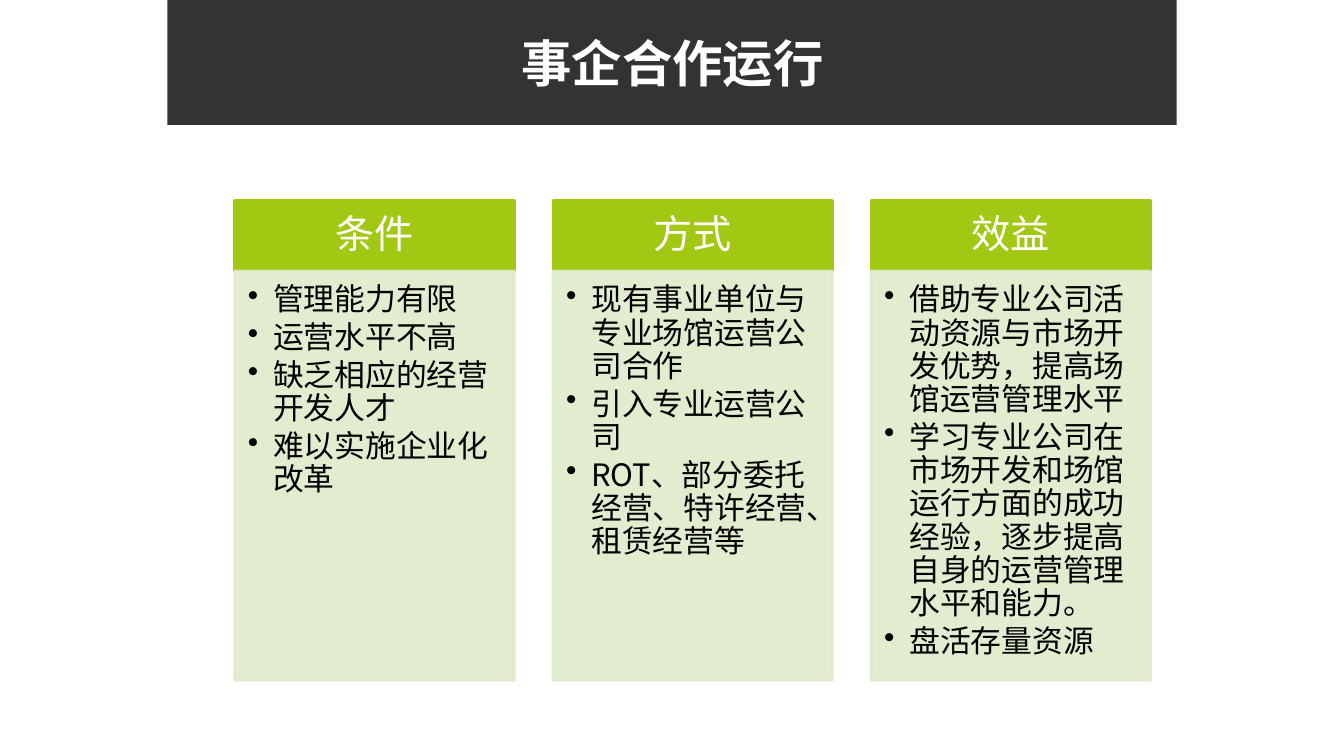
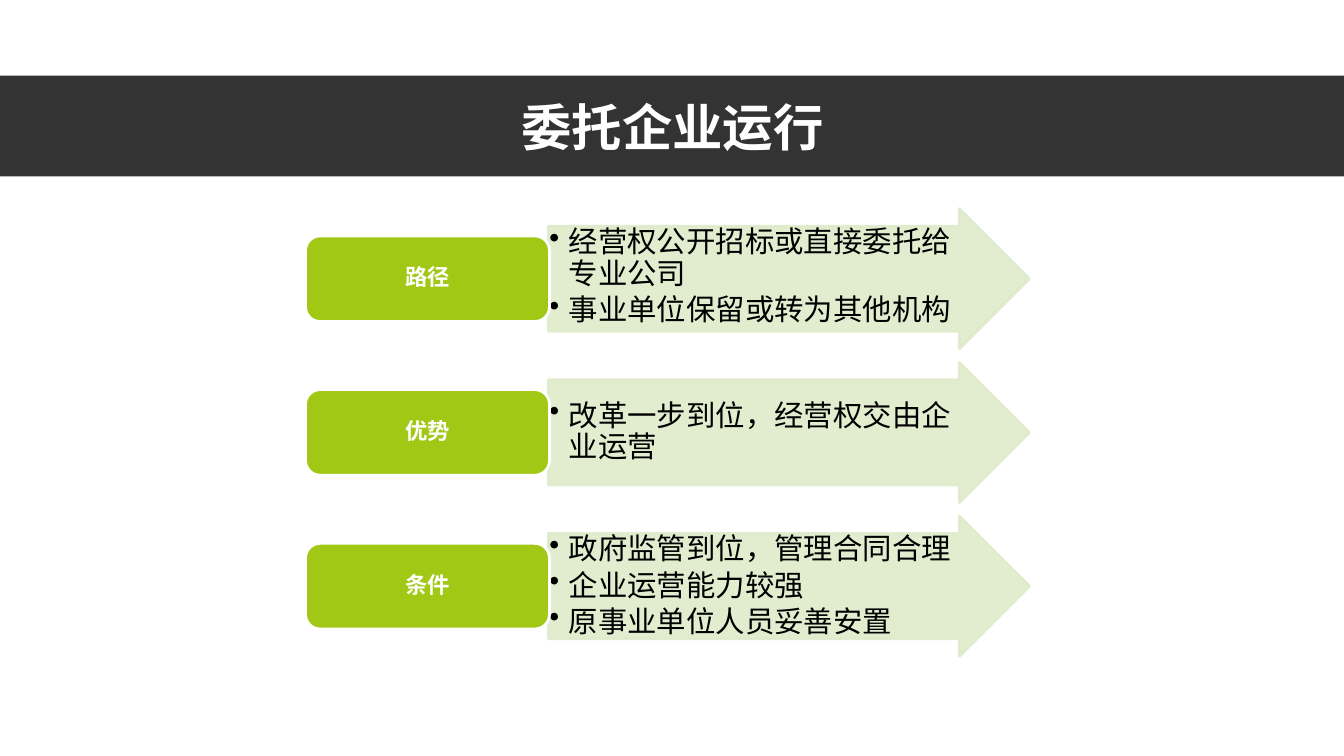
from lxml import etree
from pptx import Presentation
from pptx.dml.color import RGBColor
from pptx.enum.shapes import MSO_SHAPE
from pptx.enum.text import MSO_ANCHOR, PP_ALIGN
from pptx.oxml.ns import qn
from pptx.util import Inches, Pt

RECT, ROUND, ARROW = MSO_SHAPE.RECTANGLE, MSO_SHAPE.ROUNDED_RECTANGLE, MSO_SHAPE.RIGHT_ARROW
TOP, MIDDLE = MSO_ANCHOR.TOP, MSO_ANCHOR.MIDDLE
LEFT, CENTER = PP_ALIGN.LEFT, PP_ALIGN.CENTER

FONT = "Noto Sans CJK SC"
COLORS = {"band": "333333", "green": "A2C813", "label": "A2C816", "pale": "DFEBCB",
          "white": "FFFFFF", "black": "000000"}
TITLE_INSETS = (0.31, 0.05, 0.3, 0.05)


def add_box(s, kind, at, fill, line=None, alpha=None):
    """Draw a filled shape, optionally outlined and translucent (alpha in percent)."""
    sp = s.shapes.add_shape(kind, *[Inches(v) for v in at])
    sp.shadow.inherit = False
    sp.fill.solid()
    sp.fill.fore_color.rgb = RGBColor.from_string(COLORS[fill])
    if line:
        sp.line.color.rgb = RGBColor.from_string(COLORS[line])
        sp.line.width = Pt(2)
    else:
        sp.line.fill.background()
    if alpha:
        for clr in sp.element.spPr.iter(qn("a:srgbClr")):
            etree.SubElement(clr, qn("a:alpha")).set("val", str(alpha * 1000))
    return sp


def write(sp, lines, size, color, insets, anchor=MIDDLE, bold=False, indent=None, spacing=0.9):
    """Fill a shape with paragraphs: bulleted if an indent is given, else centred."""
    tf = sp.text_frame
    tf.word_wrap = True
    tf.vertical_anchor = anchor
    tf.margin_left, tf.margin_top, tf.margin_right, tf.margin_bottom = [Inches(v) for v in insets]
    for i, line in enumerate(lines):
        p = tf.add_paragraph() if i else tf.paragraphs[0]
        p.alignment = LEFT if indent else CENTER
        p.line_spacing = spacing
        if indent:
            p.space_after = Pt(round(size * 0.15, 2))
            pPr = p._p.get_or_add_pPr()
            pPr.set("marL", str(Inches(indent)))
            pPr.set("indent", str(-Inches(indent)))
            etree.SubElement(pPr, qn("a:buChar")).set("char", "•")
        r = p.add_run()
        r.text = line
        r.font.size = Pt(size)
        r.font.bold = bold
        r.font.color.rgb = RGBColor.from_string(COLORS[color])
        r.font.name = FONT
        etree.SubElement(r._r.get_or_add_rPr(), qn("a:ea")).set("typeface", FONT)


prs = Presentation()
prs.slide_width, prs.slide_height = Inches(13.33), Inches(7.5)

# Both slides: dark title band
titles = [("事企合作运行", (1.66, 0, 10.01, 1.24)),
          ("委托企业运行", (0, 0.75, 13.33, 1))]
slides = []
for title, at in titles:
    s = prs.slides.add_slide(prs.slide_layouts[6])
    band = add_box(s, RECT, at, "band")
    write(band, [title], 36, "white", TITLE_INSETS, bold=True, spacing=1.0)
    slides.append(s)

# Slide 1: three columns, each a header over a list
columns = [
    ("条件", ["管理能力有限", "运营水平不高", "缺乏相应的经营开发人才", "难以实施企业化改革"]),
    ("方式", ["现有事业单位与专业场馆运营公司合作", "引入专业运营公司",
            "ROT、部分委托经营、特许经营、租赁经营等"]),
    ("效益", ["借助专业公司活动资源与市场开发优势，提高场馆运营管理水平",
            "学习专业公司在市场开发和场馆运行方面的成功经验，逐步提高自身的运营管理水平和能力。",
            "盘活存量资源"]),
]
for i, (head, items) in enumerate(columns):
    x = 2.33 + i * 3.155
    header = add_box(slides[0], RECT, (x, 1.99, 2.77, 0.69), "green", "green")
    write(header, [head], 28, "white", (0.22, 0.12, 0.22, 0.12))
    body = add_box(slides[0], RECT, (x, 2.69, 2.77, 4.06), "pale", "pale", alpha=89)
    write(body, items, 22, "black", (0.13, 0.13, 0.17, 0.19), anchor=TOP, indent=0.25)

# Slide 2: three rows, each a label with an arrow
rows = [
    ("路径", ["经营权公开招标或直接委托给专业公司", "事业单位保留或转为其他机构"], TOP),
    ("优势", ["改革一步到位，经营权交由企业运营"], MIDDLE),
    ("条件", ["政府监管到位，管理合同合理", "企业运营能力较强", "原事业单位人员妥善安置"], TOP),
]
for i, (name, items, anchor) in enumerate(rows):
    y = 2.07 + i * 1.525
    arrow = add_box(slides[1], ARROW, (5.44, y, 4.77, 1.39), "pale", "pale", alpha=89)
    arrow.adjustments[0], arrow.adjustments[1] = 0.75, 0.5
    write(arrow, items, 21, "black", (0.01,) * 4, anchor=anchor, indent=0.19)
    label = add_box(slides[1], ROUND, (3.03, y + 0.27, 2.42, 0.85), "label", "white")
    label.adjustments[0] = 0.17
    write(label, [name], 16, "white", (0.19, 0.1, 0.19, 0.1), bold=True)

prs.save("out.pptx")
